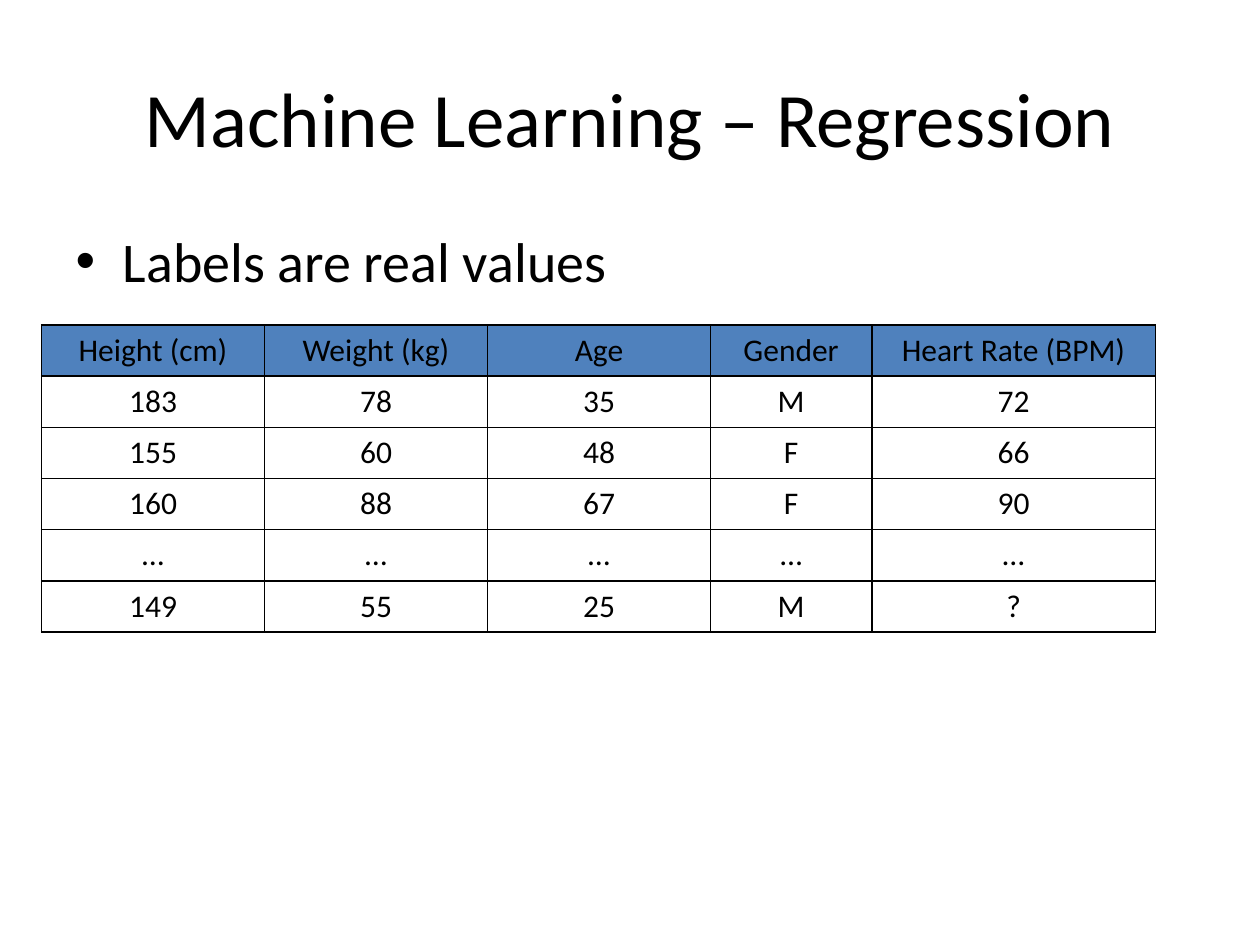
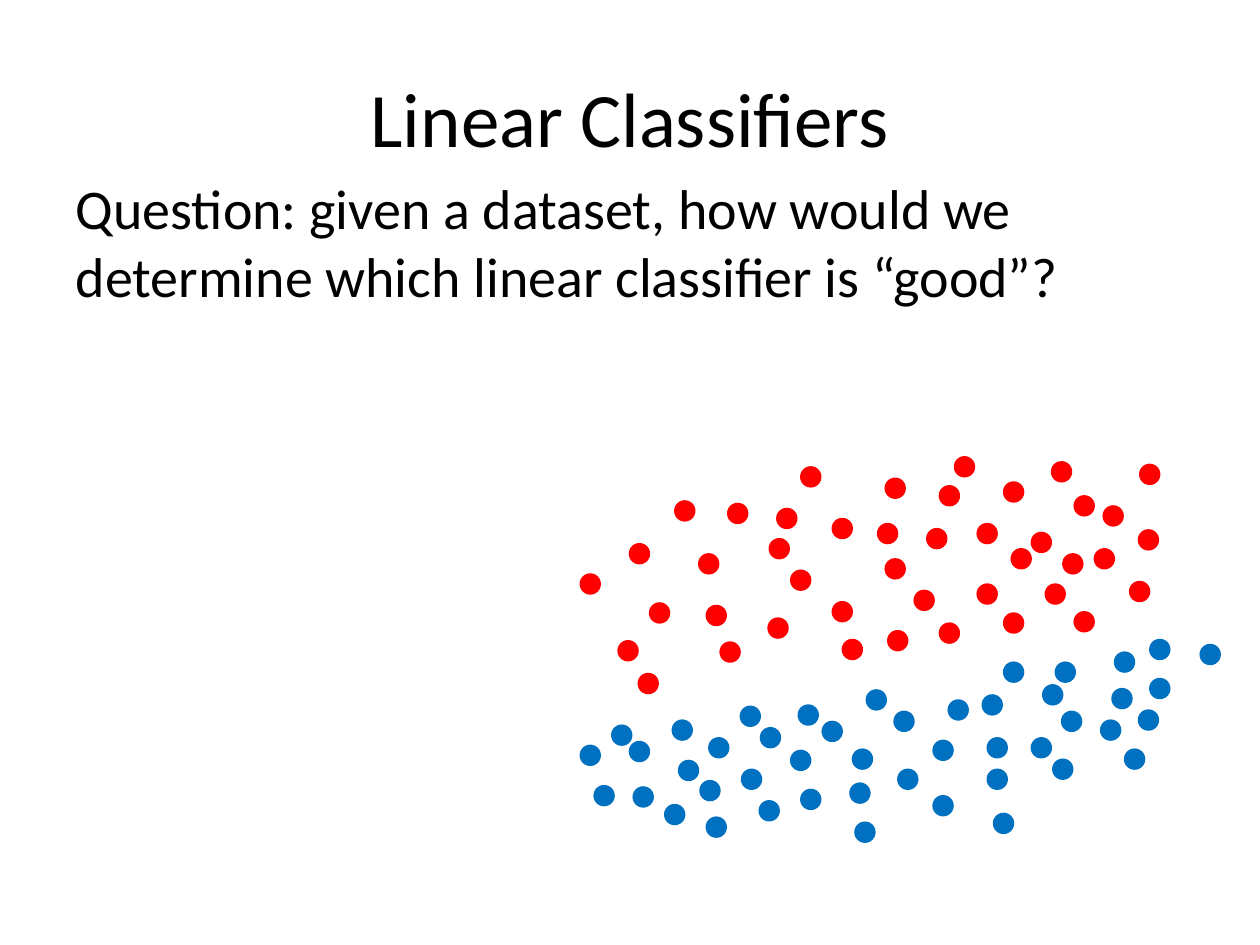
import dataclasses

import lxml.etree
import pptx
import pptx.dml.color
import pptx.enum.shapes
import pptx.enum.text
import pptx.oxml.ns
import pptx.util

COLORS = {"text": "000000", "header": "4F81BD", "border": "000000",
          "red": "FF0000", "blue": "0070C0"}
FONT = "Calibri"
CENTER = pptx.enum.text.PP_ALIGN.CENTER
LEFT = pptx.enum.text.PP_ALIGN.LEFT

# The slide is a grid of 1000 columns by 750 rows
COLUMNS, ROWS = 1000, 750
CELL = pptx.util.Inches(10) // COLUMNS
DOT_SIZE = 17


@dataclasses.dataclass(frozen=True)
class Box:
    """A rectangle in grid columns and rows."""
    left: int
    top: int
    width: int
    height: int

    def emu(self) -> tuple[int, ...]:
        return tuple(n * CELL for n in dataclasses.astuple(self))


@dataclasses.dataclass(frozen=True)
class DotClass:
    """The dots of one class: top left corners as (column, row)."""
    color: str
    corners: tuple[tuple[int, int], ...]


TITLE_BOX = Box(50, 30, 900, 125)
LIST_BOX = Box(50, 175, 900, 495)
QUESTION_BOX = Box(50, 133, 900, 567)

# Heart rate table
TABLE_LEFT, TABLE_TOP, ROW_HEIGHT = 33, 258, 40.6
COLUMN_WIDTHS = (177, 177, 177, 128, 225)
HEART_RATES = (
    ("Height (cm)", "Weight (kg)", "Age", "Gender", "Heart Rate (BPM)"),
    ("183", "78", "35", "M", "72"),
    ("155", "60", "48", "F", "66"),
    ("160", "88", "67", "F", "90"),
    ("…",) * 5,
    ("149", "55", "25", "M", "?"),
)

# Two separable classes
DATASET = (
    DotClass("red", (
        (577, 399), (702, 443), (796, 382), (660, 411), (635, 370), (802, 435),
        (627, 452), (745, 494), (757, 362), (610, 427), (609, 490), (506, 534),
        (702, 379), (745, 385), (535, 397), (775, 463), (554, 439), (696, 415),
        (660, 477), (896, 461), (796, 486), (704, 500), (903, 420), (735, 419),
        (818, 422), (834, 366), (725, 468), (868, 435), (571, 509), (852, 393),
        (499, 431), (460, 455), (852, 485), (775, 415), (668, 507), (515, 478),
        (560, 480), (843, 439), (904, 368), (616, 403), (490, 508), (829, 463),
        (875, 401))),
    DotClass("blue", (
        (676, 594), (627, 595), (588, 610), (818, 585), (912, 507), (884, 517),
        (712, 610), (752, 555), (603, 577), (471, 623), (783, 610), (527, 638),
        (837, 525), (796, 525), (842, 564), (709, 564), (882, 546), (835, 602),
        (485, 575), (783, 585), (538, 603), (903, 563), (587, 560), (560, 648),
        (652, 572), (827, 543), (533, 571), (912, 538), (740, 587), (562, 585),
        (602, 635), (633, 559), (873, 571), (788, 645), (555, 619), (678, 652),
        (779, 551), (635, 626), (460, 591), (740, 631), (674, 621), (499, 588),
        (892, 594), (687, 547), (952, 511), (502, 624))),
)


def rgb(name: str) -> pptx.dml.color.RGBColor:
    return pptx.dml.color.RGBColor.from_string(COLORS[name])


def write(tf, text: str, *, size: int, align=LEFT, color: str = "text",
          bullet: bool = True) -> None:
    p = tf.paragraphs[0]
    p.alignment = align
    r = p.add_run()
    r.text = text
    r.font.name, r.font.size = FONT, pptx.util.Pt(size)
    r.font.bold = False
    r.font.color.rgb = rgb(color)
    if not bullet:
        p_pr = p._p.get_or_add_pPr()
        p_pr.set("marL", "0")
        p_pr.set("indent", "0")
        lxml.etree.SubElement(p_pr, pptx.oxml.ns.qn("a:buNone"))


def place(sp, box: Box) -> None:
    sp.left, sp.top, sp.width, sp.height = box.emu()


def add_slide(prs, title: str, body: str, body_box: Box, bullet: bool):
    slide = prs.slides.add_slide(prs.slide_layouts[1])
    heading, content = slide.placeholders
    place(heading, TITLE_BOX)
    write(heading.text_frame, title, size=44, align=CENTER)
    place(content, body_box)
    write(content.text_frame, body, size=32, bullet=bullet)
    return slide


def add_borders(cell, width: int = 1) -> None:
    tc_pr = cell._tc.get_or_add_tcPr()
    qn = pptx.oxml.ns.qn
    for side in "LRTB":
        ln = lxml.etree.SubElement(tc_pr, qn(f"a:ln{side}"),
                                   w=str(pptx.util.Pt(width)))
        fill = lxml.etree.SubElement(ln, qn("a:solidFill"))
        lxml.etree.SubElement(fill, qn("a:srgbClr"), val=COLORS["border"])


def add_heart_rate_table(slide) -> None:
    row_height = round(ROW_HEIGHT * CELL)
    frame = slide.shapes.add_table(
        len(HEART_RATES), len(COLUMN_WIDTHS), TABLE_LEFT * CELL,
        TABLE_TOP * CELL, sum(COLUMN_WIDTHS) * CELL,
        row_height * len(HEART_RATES))
    table = frame.table
    table.first_row = table.horz_banding = False
    for column, width in zip(table.columns, COLUMN_WIDTHS):
        column.width = width * CELL
    for i, values in enumerate(HEART_RATES):
        table.rows[i].height = row_height
        for cell, value in zip(table.rows[i].cells, values):
            write(cell.text_frame, value, size=18, align=CENTER)
            add_borders(cell)
            if i == 0:
                cell.fill.solid()
                cell.fill.fore_color.rgb = rgb("header")
            else:
                cell.fill.background()


def add_dots(slide, dots: DotClass) -> None:
    for column, row in dots.corners:
        sp = slide.shapes.add_shape(
            pptx.enum.shapes.MSO_SHAPE.OVAL,
            *Box(column, row, DOT_SIZE, DOT_SIZE).emu())
        sp.shadow.inherit = False
        sp.fill.solid()
        sp.fill.fore_color.rgb = rgb(dots.color)
        sp.line.fill.background()


def main() -> None:
    prs = pptx.Presentation()
    prs.slide_width, prs.slide_height = COLUMNS * CELL, ROWS * CELL

    # Regression
    slide = add_slide(prs, "Machine Learning – Regression",
                      "Labels are real values", LIST_BOX, bullet=True)
    add_heart_rate_table(slide)

    # Linear classifiers
    slide = add_slide(prs, "Linear Classifiers",
                      "Question: given a dataset, how would we determine "
                      "which linear classifier is “good”?",
                      QUESTION_BOX, bullet=False)
    for dots in DATASET:
        add_dots(slide, dots)

    prs.save("out.pptx")


if __name__ == "__main__":
    main()
